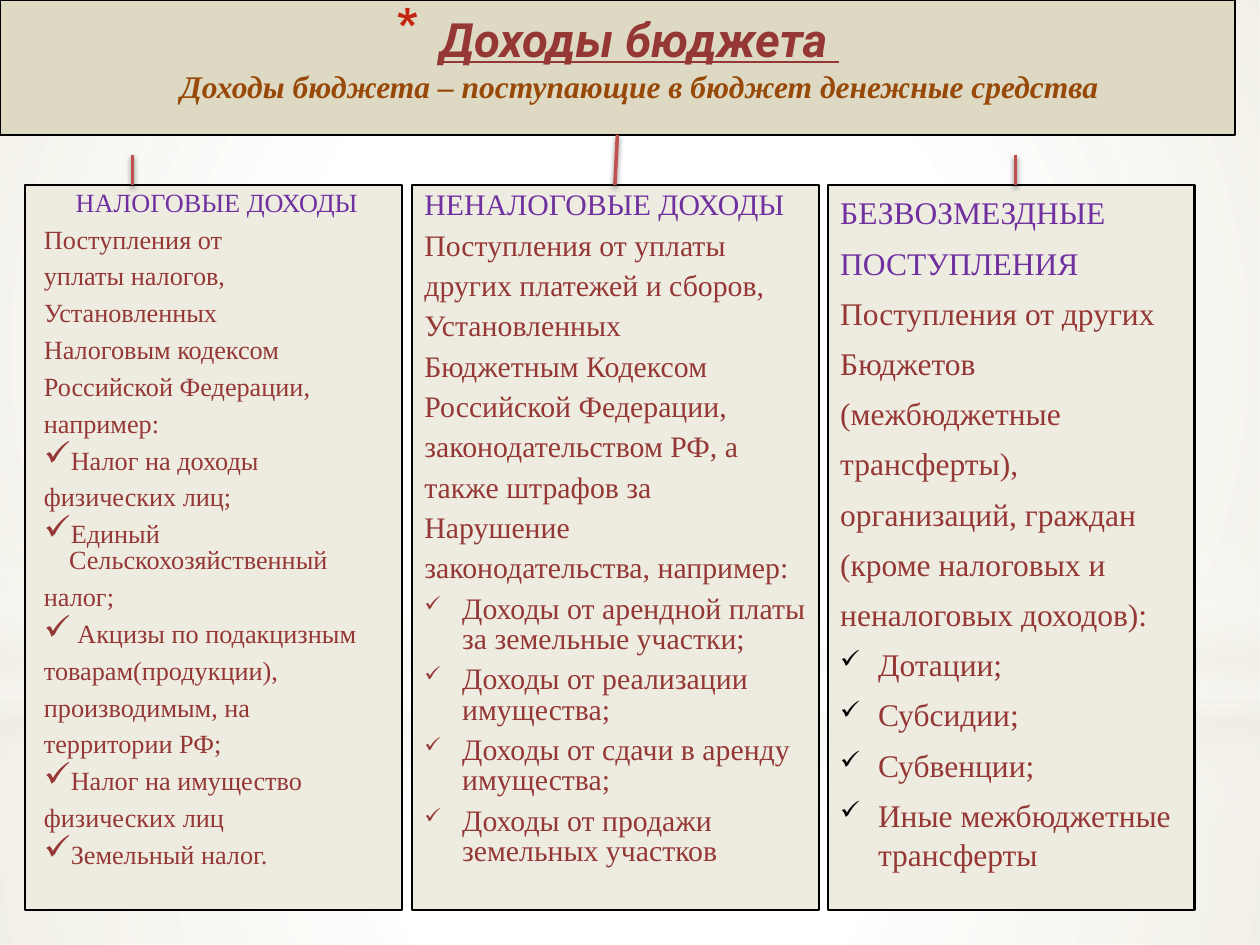
from pptx import Presentation
from pptx.dml.color import RGBColor
from pptx.enum.shapes import MSO_CONNECTOR, MSO_SHAPE
from pptx.enum.text import MSO_ANCHOR, MSO_AUTO_SIZE, PP_ALIGN
from pptx.oxml import parse_xml
from pptx.oxml.ns import nsdecls
from pptx.util import Inches, Pt

RECT, OVAL = MSO_SHAPE.RECTANGLE, MSO_SHAPE.OVAL
STRAIGHT = MSO_CONNECTOR.STRAIGHT
TOP = MSO_ANCHOR.TOP
NO_FIT = MSO_AUTO_SIZE.NONE
LEFT, CENTER = PP_ALIGN.LEFT, PP_ALIGN.CENTER

COLORS = {
    "white": "FFFFFF", "cream": "EEECE1", "sand": "DDD9C3", "black": "000000",
    "wine": "953735", "brown": "984807", "purple": "7030A0",
    "star": "C3260C", "link": "C0504D",
}
SERIF = "Times New Roman"
CHECK = "✓"
COLUMN_TOP, COLUMN_HEIGHT = 1.47, 5.75

# Soft background: shape, box, stops (position, colour, opacity), round or linear
BACKDROP = [
    (RECT, (0, 5.58, 10, 1.92),
     [(0, "white", 91), (37, "white", 76), (100, "cream", 79)], True),
    (RECT, (0, 0, 10, 5.58),
     [(0, "white", 89), (48, "white", 62), (100, "cream", 79)], True),
    (RECT, (0, 4.12, 10, 2.5),
     [(0, "white", 0), (29, "white", 30), (45, "cream", 40), (55, "white", 26),
      (65, "cream", 60), (100, "white", 0)], False),
    (OVAL, (0, 1.75, 10, 5.58), [(0, "white", 100), (56, "white", 0)], True),
]

# A leading check mark makes a line a bullet
COLUMNS = [
    {
        "left": 0.2, "width": 2.99, "size": 15, "indent": (0.25, -0.2),
        "heading_align": CENTER, "bullet": ("wine", 130),
        "spacing": {"line_spacing": 0.83, "space_before": Pt(3.1), "space_after": Pt(3)},
        "heading": ["НАЛОГОВЫЕ ДОХОДЫ"],
        "lines": ["Поступления от", "уплаты налогов,", "Установленных",
                  "Налоговым кодексом", "Российской Федерации,", "например:",
                  "✓Налог на доходы", "физических лиц;",
                  "✓Единый Сельскохозяйственный", "налог;",
                  "✓ Акцизы по подакцизным", "товарам(продукции),",
                  "производимым, на", "территории РФ;",
                  "✓Налог на имущество", "физических лиц", "✓Земельный налог."],
    },
    {
        "left": 3.27, "width": 3.23, "size": 17, "indent": (0.3, -0.3),
        "heading_align": LEFT, "bullet": ("wine", 70),
        "spacing": {"line_spacing": 0.85, "space_before": Pt(5.7)},
        "heading": ["НЕНАЛОГОВЫЕ ДОХОДЫ"],
        "lines": ["Поступления от уплаты", "других платежей и сборов,",
                  "Установленных", "Бюджетным Кодексом", "Российской Федерации,",
                  "законодательством РФ, а", "также штрафов за", "Нарушение",
                  "законодательства, например:",
                  "✓Доходы от арендной платы за земельные участки;",
                  "✓Доходы от реализации имущества;",
                  "✓Доходы от сдачи в аренду имущества;",
                  "✓Доходы от продажи земельных участков"],
    },
    {
        "left": 6.57, "width": 2.91, "size": 18, "indent": (0.3, -0.3),
        "heading_align": LEFT, "bullet": ("black", 80),
        "spacing": {"line_spacing": 1.05, "space_before": Pt(6)},
        "heading": ["БЕЗВОЗМЕЗДНЫЕ", "ПОСТУПЛЕНИЯ"],
        "lines": ["Поступления от других", "Бюджетов", "(межбюджетные",
                  "трансферты),", "организаций, граждан", "(кроме налоговых и",
                  "неналоговых доходов):", "✓Дотации;", "✓Субсидии;",
                  "✓Субвенции;", "✓Иные межбюджетные трансферты"],
    },
]

# Links from the title down to the columns: start, end
LINKS = [((1.05, 1.23), (1.05, 1.47)), ((8.06, 1.23), (8.06, 1.47)),
         ((4.9, 1.07), (4.88, 1.47))]


def rgb(name):
    return RGBColor.from_string(COLORS[name])


def inches(values):
    return [Inches(value) for value in values]


def set_attributes(target, values):
    for name, value in values.items():
        setattr(target, name, value)


def add_span(para, text, color, **values):
    span = para.add_run()
    span.text = text
    set_attributes(span.font, values)
    span.font.color.rgb = rgb(color)


def set_indent(para, indent):
    props = para._p.get_or_add_pPr()
    for name, value in zip(("marL", "indent"), inches(indent)):
        props.set(name, str(value))


def add_bullet(para, char, color, percent):
    props = para._p.get_or_add_pPr()
    for xml in (f'<a:buClr {nsdecls("a")}><a:srgbClr val="{COLORS[color]}"/></a:buClr>',
                f'<a:buSzPct {nsdecls("a")} val="{percent * 1000}"/>',
                f'<a:buChar {nsdecls("a")} char="{char}"/>'):
        props.append(parse_xml(xml))


def style_panel(panel, fill):
    panel.fill.solid()
    panel.fill.fore_color.rgb = rgb(fill)
    panel.line.color.rgb = rgb("black")
    panel.line.width = Pt(1.25)


def add_backdrop(page, kind, box, stops, is_round):
    shape = page.shapes.add_shape(kind, *inches(box))
    shape.shadow.inherit = False
    shape.line.fill.background()
    stop_xml = "".join(
        f'<a:gs pos="{pos * 1000}"><a:srgbClr val="{COLORS[color]}">'
        f'<a:alpha val="{opacity * 1000}"/></a:srgbClr></a:gs>'
        for pos, color, opacity in stops)
    direction = ('<a:path path="circle"><a:fillToRect l="50000" t="50000" r="50000" '
                 'b="50000"/></a:path>' if is_round else '<a:lin ang="5400000" scaled="0"/>')
    shape.line._get_or_add_ln().addprevious(parse_xml(
        f'<a:gradFill {nsdecls("a")} rotWithShape="1"><a:gsLst>{stop_xml}</a:gsLst>'
        f'{direction}</a:gradFill>'))


def add_title(page, box):
    title = page.shapes.title
    # Bring the title in front of the backdrop
    title._element.getparent().append(title._element)
    set_attributes(title, dict(zip(("left", "top", "width", "height"), inches(box))))
    style_panel(title, "sand")
    set_attributes(title.text_frame, {
        "word_wrap": True, "auto_size": NO_FIT, "vertical_anchor": TOP,
        "margin_top": Inches(0.08)})
    para = title.text_frame.paragraphs[0]
    para.alignment = CENTER
    set_indent(para, (0.35, -0.35))
    add_bullet(para, "*", "star", 128)
    add_span(para, "Доходы бюджета ", "wine", size=Pt(27), name="Roboto",
             bold=True, italic=True, underline=True)
    para.add_line_break()
    add_span(para, "Доходы бюджета – поступающие в бюджет денежные средства", "brown",
             size=Pt(18), name=SERIF, bold=True, italic=True)


def add_column(page, column, box):
    panel = page.shapes.add_shape(RECT, *inches(box))
    panel.shadow.inherit = False
    style_panel(panel, "cream")
    frame = panel.text_frame
    set_attributes(frame, {"word_wrap": True, "auto_size": NO_FIT, "vertical_anchor": TOP})
    heading_count = len(column["heading"])
    for index, line in enumerate(column["heading"] + column["lines"]):
        is_heading = index < heading_count
        para = frame.add_paragraph() if index else frame.paragraphs[0]
        para.alignment = column["heading_align"] if is_heading else LEFT
        set_indent(para, column["indent"])
        if line.startswith(CHECK):
            add_bullet(para, CHECK, *column["bullet"])
        set_attributes(para, column["spacing"])
        if index == 0:
            para.space_before = Pt(0)
        add_span(para, line.removeprefix(CHECK), "purple" if is_heading else "wine",
                 size=Pt(column["size"]), name=SERIF)


def add_link(page, start, end):
    link = page.shapes.add_connector(STRAIGHT, *inches(start + end))
    link.line.color.rgb = rgb("link")
    link.line.width = Pt(2)
    link._element.spPr.append(parse_xml(
        f'<a:effectLst {nsdecls("a")}><a:outerShdw blurRad="{Pt(3.1)}" dist="{Pt(1.8)}" '
        f'dir="5400000" rotWithShape="0"><a:srgbClr val="{COLORS["black"]}">'
        '<a:alpha val="45000"/></a:srgbClr></a:outerShdw></a:effectLst>'))


def main():
    deck = Presentation()
    deck.slide_width, deck.slide_height = inches((10, 7.5))
    page = deck.slides.add_slide(deck.slide_layouts[5])
    for part in BACKDROP:
        add_backdrop(page, *part)
    add_title(page, (0, 0, 9.8, 1.07))
    for column in COLUMNS:
        add_column(page, column,
                   (column["left"], COLUMN_TOP, column["width"], COLUMN_HEIGHT))
    for start, end in LINKS:
        add_link(page, start, end)
    deck.save("out.pptx")


if __name__ == "__main__":
    main()
